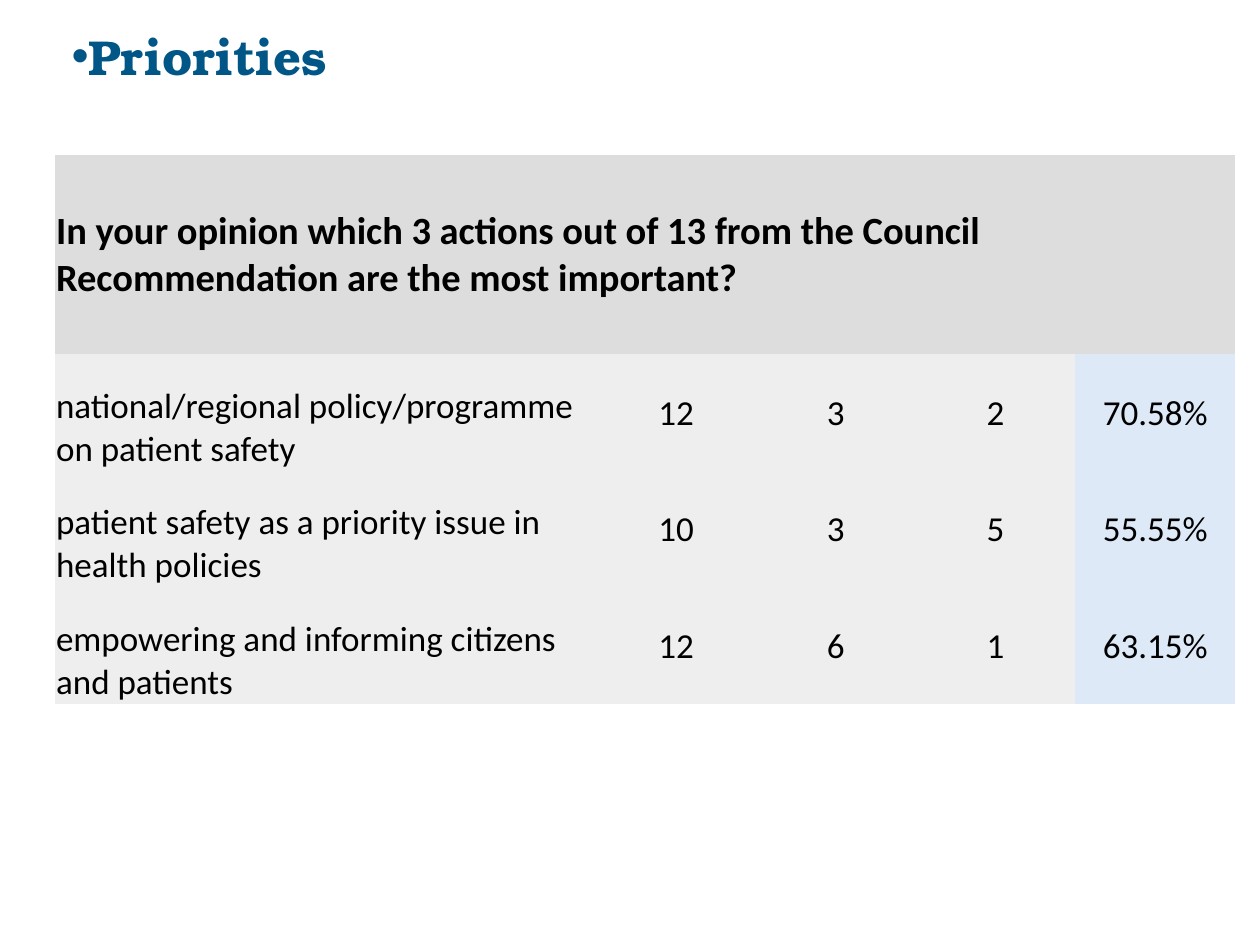
from dataclasses import dataclass

from pptx import Presentation
from pptx.dml.color import RGBColor as RGB
from pptx.enum.text import MSO_ANCHOR as ANCHOR, MSO_AUTO_SIZE as AUTO, PP_ALIGN as ALIGN
from pptx.oxml.ns import qn
from pptx.util import Cm, Pt

TITLE = "Priorities"
QUESTION = ("In your opinion which 3 actions out of 13 from the Council "
            "Recommendation are the most important?")
ACTIONS = [
    ("national/regional policy/programme on patient safety", "12", "3", "2", "70.58%"),
    ("patient safety as a priority issue in health policies", "10", "3", "5", "55.55%"),
    ("empowering and informing citizens and patients", "12", "6", "1", "63.15%"),
]
COL_WIDTHS = [10.92] + [3.22] * 4
ROW_HEIGHTS = [4.02] + [2.35] * len(ACTIONS)
NO_STYLE_NO_GRID = "{2D5ABB26-0587-4C30-8999-92F81FD0307C}"


@dataclass(frozen=True)
class Theme:
    title_font: str = "TeX Gyre Bonum"
    body_font: str = "Calibri"
    title_size: int = 28
    question_size: int = 22
    action_size: int = 20
    title: str = "005686"
    text: str = "000000"
    header: str = "DDDDDD"
    row: str = "EEEEEE"
    share: str = "DEE9F7"


THEME = Theme()


def set_font(p, name, size, color, bold=False):
    p.font.name = name
    p.font.size = Pt(size)
    p.font.bold = bold
    p.font.color.rgb = RGB.from_string(color)


def add_title(slide):
    sp = slide.shapes.title
    sp.left, sp.top, sp.width, sp.height = Cm(1.19), Cm(0.41), Cm(20.04), Cm(1.6)
    tf = sp.text_frame
    tf.text = TITLE
    tf.auto_size = AUTO.NONE
    tf.vertical_anchor = ANCHOR.TOP
    p = tf.paragraphs[0]
    p.alignment = ALIGN.LEFT
    pPr = p._p.get_or_add_pPr()
    pPr.set("marL", "0")
    pPr.set("indent", "0")
    bullet_font = pPr.makeelement(qn("a:buFont"), {"typeface": "Arial"})
    bullet = pPr.makeelement(qn("a:buChar"), {"char": "•"})
    pPr.extend([bullet_font, bullet])
    set_font(p, THEME.title_font, THEME.title_size, THEME.title, bold=True)


def fill_cell(cell, text, fill, size, anchor=ANCHOR.MIDDLE, align=ALIGN.LEFT, bold=False):
    cell.text = text
    cell.fill.solid()
    cell.fill.fore_color.rgb = RGB.from_string(fill)
    cell.margin_left = cell.margin_right = cell.margin_top = Cm(0.03)
    cell.margin_bottom = 0
    cell.vertical_anchor = anchor
    p = cell.text_frame.paragraphs[0]
    p.alignment = align
    set_font(p, THEME.body_font, size, THEME.text, bold)


def add_priorities_table(slide):
    table = slide.shapes.add_table(
        len(ROW_HEIGHTS), len(COL_WIDTHS), Cm(1.1), Cm(3.12),
        Cm(sum(COL_WIDTHS)), Cm(sum(ROW_HEIGHTS))).table
    table.first_row = table.horz_banding = False
    table._tbl.tblPr.find(qn("a:tableStyleId")).text = NO_STYLE_NO_GRID
    for column, width in zip(table.columns, COL_WIDTHS):
        column.width = Cm(width)
    for row, height in zip(table.rows, ROW_HEIGHTS):
        row.height = Cm(height)

    last = len(COL_WIDTHS) - 1
    question = table.cell(0, 0)
    question.merge(table.cell(0, last))
    fill_cell(question, QUESTION, THEME.header, THEME.question_size, bold=True)
    for r, (action, *figures) in enumerate(ACTIONS, 1):
        fill_cell(table.cell(r, 0), action, THEME.row, THEME.action_size, ANCHOR.BOTTOM)
        for c, figure in enumerate(figures, 1):
            fill = THEME.share if c == last else THEME.row
            fill_cell(table.cell(r, c), figure, fill, THEME.action_size, align=ALIGN.CENTER)


def main():
    prs = Presentation()
    prs.slide_width, prs.slide_height = Cm(25.4), Cm(19.05)
    slide = prs.slides.add_slide(prs.slide_layouts.get_by_name("Title Only"))
    add_title(slide)
    add_priorities_table(slide)
    prs.save("out.pptx")


if __name__ == "__main__":
    main()
